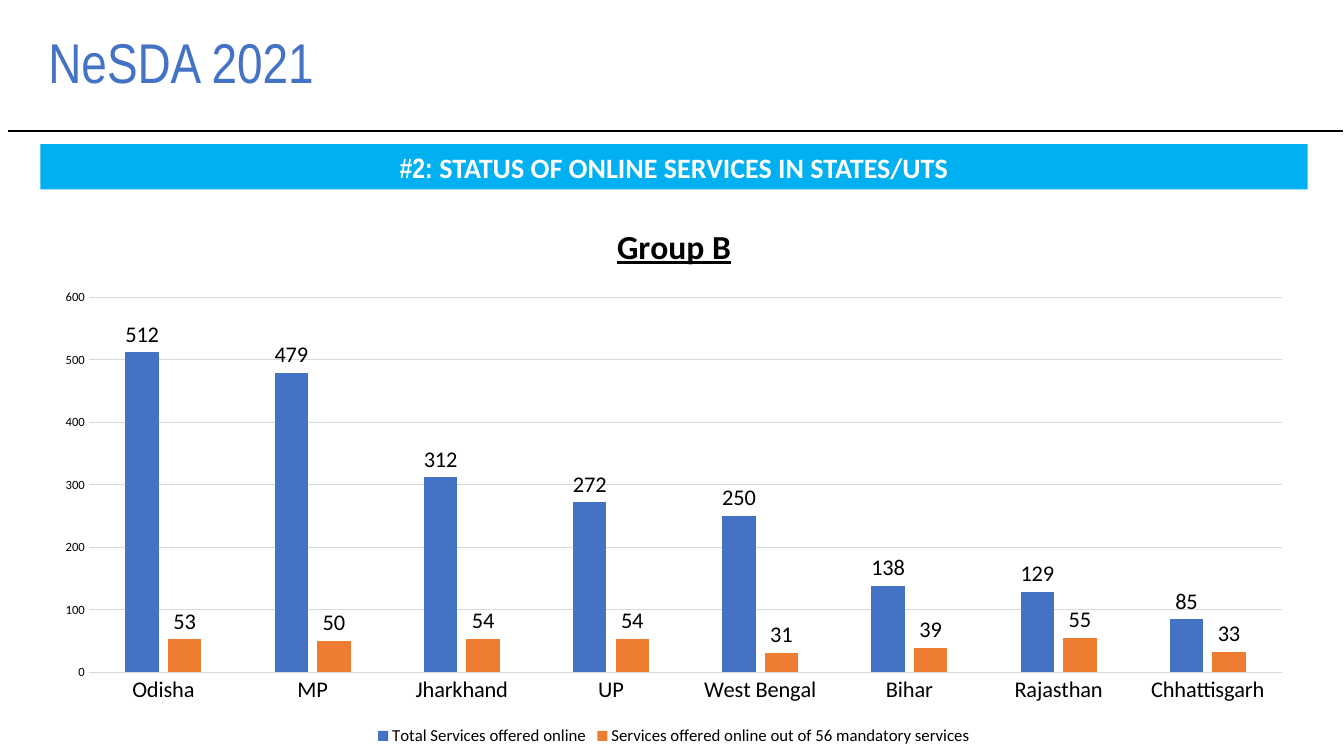
from dataclasses import dataclass

from lxml import etree
from pptx import Presentation
from pptx.chart import data as cd
from pptx.dml.color import RGBColor
from pptx.enum import chart as ch, shapes, text
from pptx.oxml import ns
from pptx.util import Inches, Pt


@dataclass(frozen=True)
class Theme:
    """Colours, fonts and type sizes of the slide."""
    blue: str = "4472C4"
    orange: str = "ED7D31"
    sky: str = "00B0F0"
    black: str = "000000"
    white: str = "FFFFFF"
    grey: str = "D9D9D9"
    body: str = "Calibri"
    head: str = "Arial Narrow"
    title: int = 40
    group: int = 24
    band: int = 20
    label: int = 16
    key: int = 12
    base: int = 10
    tick: int = 9


T = Theme()
STATES = ["Odisha", "MP", "Jharkhand", "UP", "West Bengal", "Bihar",
          "Rajasthan", "Chhattisgarh"]
SERIES = [
    ("Total Services offered online", T.blue,
     [512, 479, 312, 272, 250, 138, 129, 85]),
    ("Services offered online out of 56 mandatory services", T.orange,
     [53, 50, 54, 54, 31, 39, 55, 33]),
]


def style(font, size, color=T.black, name=T.body, bold=False):
    """Set size, colour, face and weight of a font."""
    font.size = Pt(size)
    font.color.rgb = RGBColor.from_string(color)
    font.name = name
    font.bold = bold


def paint(fill, color):
    """Give a fill one solid colour."""
    fill.solid()
    fill.fore_color.rgb = RGBColor.from_string(color)


def stroke(line, color, width):
    """Give a line its colour and width."""
    paint(line.fill, color)
    line.width = Pt(width)


def add_title(slide, words):
    """Place and format the title."""
    box = slide.shapes.title
    box.left, box.top = Inches(0.38), Inches(0.06)
    box.width, box.height = Inches(12.76), Inches(1.17)
    frame = box.text_frame
    frame.text = words
    frame.vertical_anchor = text.MSO_ANCHOR.MIDDLE
    para = frame.paragraphs[0]
    para.alignment = text.PP_ALIGN.LEFT
    para.line_spacing = 0.9
    style(para.runs[0].font, T.title, T.blue, T.head)


def add_rule(slide, left, right, top):
    """Draw a thin level line."""
    rule = slide.shapes.add_connector(
        shapes.MSO_CONNECTOR.STRAIGHT,
        Inches(left), Inches(top), Inches(right), Inches(top))
    stroke(rule.line, T.black, 1)
    etree.SubElement(rule.element.spPr, ns.qn("a:effectLst"))


def add_band(slide, parts):
    """Draw the heading band from pairs of words and font name."""
    band = slide.shapes.add_shape(
        shapes.MSO_SHAPE.RECTANGLE,
        Inches(0.4), Inches(1.43), Inches(12.57), Inches(0.45))
    band.shadow.inherit = False
    paint(band.fill, T.sky)
    band.line.fill.background()
    band.text_frame.vertical_anchor = text.MSO_ANCHOR.MIDDLE
    para = band.text_frame.paragraphs[0]
    para.alignment = text.PP_ALIGN.CENTER
    for words, name in parts:
        run = para.add_run()
        run.text = words
        style(run.font, T.band, T.white, name, True)


def set_axes(chart):
    """Format both axes and the grid."""
    for axis, size in ((chart.category_axis, T.label),
                       (chart.value_axis, T.tick)):
        axis.major_tick_mark = axis.minor_tick_mark = ch.XL_TICK_MARK.NONE
        style(axis.tick_labels.font, size)
    stroke(chart.category_axis.format.line, T.grey, 0.75)
    values = chart.value_axis
    values.minimum_scale, values.maximum_scale = 0, 600
    values.major_unit = 100
    values.format.line.fill.background()
    stroke(values.major_gridlines.format.line, T.grey, 0.75)


def set_bars(plot):
    """Format the columns and their value labels."""
    plot.gap_width, plot.overlap = 219, -27
    plot.vary_by_categories = False
    for bars, (_, color, _) in zip(plot.series, SERIES):
        paint(bars.format.fill, color)
        bars.invert_if_negative = False
        labels = bars.data_labels
        labels.show_value = True
        labels.position = ch.XL_LABEL_POSITION.OUTSIDE_END
        style(labels.font, T.label)


def add_chart(slide, title):
    """Add the clustered column chart."""
    data = cd.CategoryChartData()
    data.categories = STATES
    for name, _, values in SERIES:
        data.add_series(name, values)
    chart = slide.shapes.add_chart(
        ch.XL_CHART_TYPE.COLUMN_CLUSTERED, Inches(0.4), Inches(2),
        Inches(12.57), Inches(5.44), data).chart
    style(chart.font, T.base)
    chart.has_title = True
    chart.chart_title.include_in_layout = False
    frame = chart.chart_title.text_frame
    frame.text = title
    font = frame.paragraphs[0].runs[0].font
    style(font, T.group, bold=True)
    font.underline = True
    chart.has_legend = True
    chart.legend.position = ch.XL_LEGEND_POSITION.BOTTOM
    chart.legend.include_in_layout = False
    style(chart.legend.font, T.key)
    set_axes(chart)
    set_bars(chart.plots[0])


def main():
    """Build and save the slide."""
    deck = Presentation()
    deck.slide_width, deck.slide_height = Inches(13.33), Inches(7.5)
    slide = deck.slides.add_slide(deck.slide_layouts[5])
    add_title(slide, "NeSDA 2021")
    add_rule(slide, 0.08, 13.32, 1.3)
    add_band(slide, [("#2: ", T.head),
                     ("STATUS OF ONLINE SERVICES IN STATES/UTS", T.body)])
    add_chart(slide, "Group B")
    deck.save("out.pptx")


if __name__ == "__main__":
    main()
